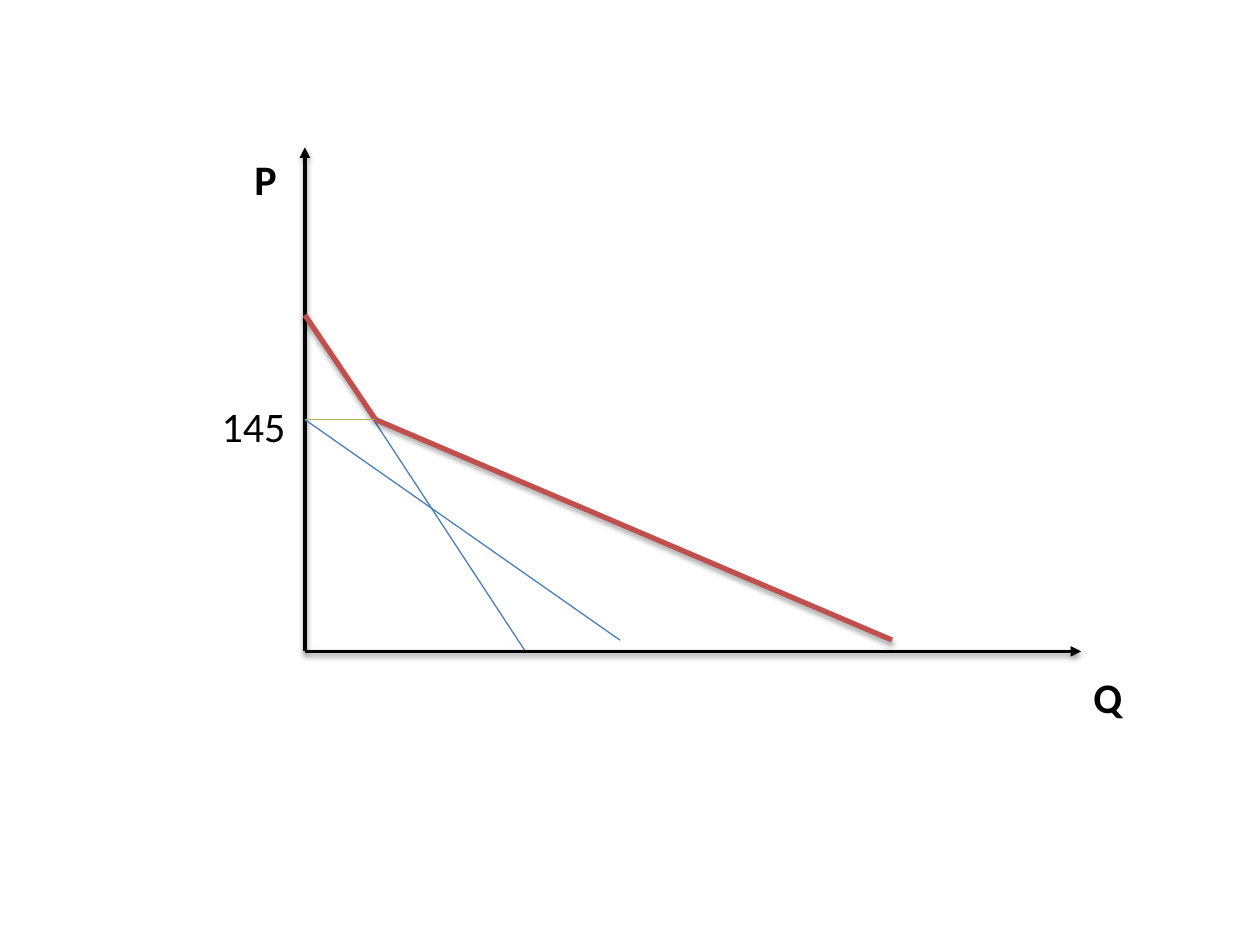
from dataclasses import dataclass
from typing import Optional

from lxml.etree import SubElement
from pptx import Presentation
from pptx.dml.color import RGBColor
from pptx.enum.shapes import MSO_CONNECTOR as Connector
from pptx.enum.text import MSO_AUTO_SIZE as AutoSize
from pptx.oxml.ns import qn
from pptx.slide import Slide
from pptx.util import Inches, Pt

BLACK = RGBColor(0x00, 0x00, 0x00)
BLUE = RGBColor(0x4B, 0x7E, 0xBC)
RED = RGBColor(0xC0, 0x50, 0x4D)
GREEN = RGBColor(0x98, 0xB9, 0x55)

Point = tuple[float, float]


@dataclass(frozen=True)
class Shadow:
    opacity: int
    distance: float
    blur: float = 3.1


@dataclass(frozen=True)
class Stroke:
    color: RGBColor
    width: float
    shadow: Optional[Shadow] = None
    arrow: bool = False


@dataclass(frozen=True)
class Segment:
    start: Point
    end: Point
    stroke: Stroke


@dataclass(frozen=True)
class Label:
    text: str
    left: float
    top: float
    width: float
    bold: bool = True


AXIS = Stroke(BLACK, 2, Shadow(38, 1.6), arrow=True)
MARKET_DEMAND = Stroke(RED, 3, Shadow(35, 1.8))
GROUP_DEMAND = Stroke(BLUE, 0.75)
PRICE_LEVEL = Stroke(GREEN, 0.75)

ORIGIN = (2.42, 5.17)
CHOKE_PRICE = (2.42, 2.5)
KINK_PRICE = (2.42, 3.33)
KINK = (2.98, 3.33)

GROUP_AND_MARKET_LINES = [
    Segment(CHOKE_PRICE, (4.17, 5.17), GROUP_DEMAND),
    Segment(ORIGIN, (2.42, 1.17), AXIS),
    Segment(ORIGIN, (8.58, 5.17), AXIS),
    Segment(KINK_PRICE, (4.92, 5.08), GROUP_DEMAND),
    Segment(CHOKE_PRICE, KINK, MARKET_DEMAND),
    Segment(KINK, (7.08, 5.08), MARKET_DEMAND),
]
PRICE_LINE = Segment(KINK_PRICE, KINK, PRICE_LEVEL)
LABELS = [
    Label("P", 1.92, 1.17, 0.38),
    Label("Q", 8.58, 5.28, 0.43),
    Label("145", 1.66, 3.13, 0.71, bold=False),
]
LABEL_HEIGHT = 0.5


def draw_segment(slide: Slide, segment: Segment) -> None:
    stroke = segment.stroke
    ends = [Inches(value) for value in segment.start + segment.end]
    connector = slide.shapes.add_connector(Connector.STRAIGHT, *ends)
    connector.line.color.rgb = stroke.color
    connector.line.width = Pt(stroke.width)
    properties = connector._element.spPr
    if stroke.arrow:
        SubElement(properties.find(qn("a:ln")), qn("a:tailEnd"), type="triangle")
    effects = SubElement(properties, qn("a:effectLst"))
    if stroke.shadow:
        cast = SubElement(
            effects,
            qn("a:outerShdw"),
            blurRad=str(Pt(stroke.shadow.blur)),
            dist=str(Pt(stroke.shadow.distance)),
            dir=str(90 * 60000),
            rotWithShape="0",
        )
        tint = SubElement(cast, qn("a:srgbClr"), val=str(BLACK))
        SubElement(tint, qn("a:alpha"), val=str(stroke.shadow.opacity * 1000))


def draw_label(slide: Slide, label: Label) -> None:
    place = [Inches(v) for v in (label.left, label.top, label.width, LABEL_HEIGHT)]
    frame = slide.shapes.add_textbox(*place).text_frame
    frame.word_wrap = False
    frame.auto_size = AutoSize.SHAPE_TO_FIT_TEXT
    run = frame.paragraphs[0].add_run()
    run.text = label.text
    run.font.color.rgb = BLACK
    formats = {"name": "Calibri", "size": Pt(24), "bold": label.bold}
    for attribute, value in formats.items():
        setattr(run.font, attribute, value)


def main() -> None:
    deck = Presentation()
    deck.slide_width = Inches(10)
    deck.slide_height = Inches(7.5)
    slide = deck.slides.add_slide(deck.slide_layouts[6])
    for segment in GROUP_AND_MARKET_LINES:
        draw_segment(slide, segment)
    for label in LABELS:
        draw_label(slide, label)
    draw_segment(slide, PRICE_LINE)
    deck.save("out.pptx")


if __name__ == "__main__":
    main()
